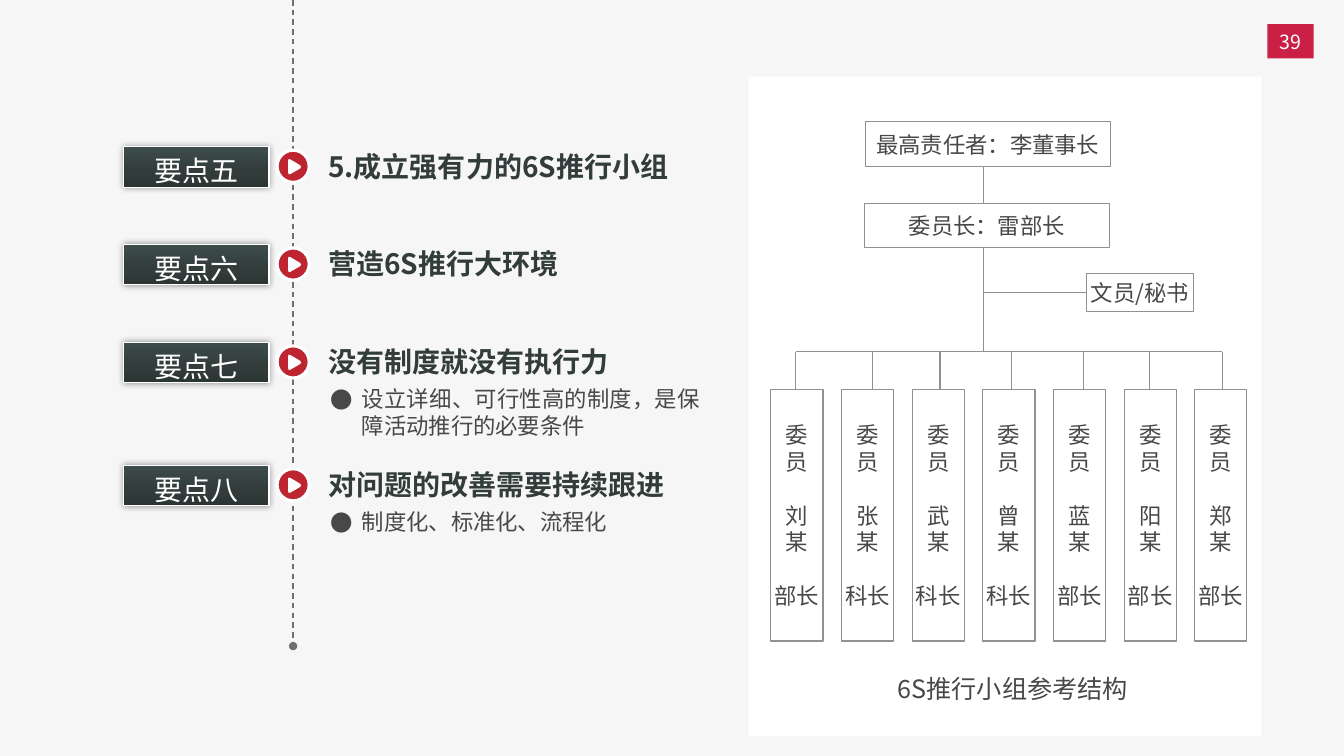
from copy import deepcopy
from lxml import etree
from pptx import Presentation
from pptx.dml.color import RGBColor
from pptx.enum.dml import MSO_LINE
from pptx.enum.shapes import MSO_CONNECTOR, MSO_SHAPE
from pptx.enum.text import MSO_ANCHOR, PP_ALIGN
from pptx.oxml.ns import qn
from pptx.util import Pt

# Content: label, heading, detail, detail width, top of the dot
POINTS = [
    ("要点五", "5.成立强有力的6S推行小组", None, 0, 107.3),
    ("要点六", "营造6S推行大环境", None, 0, 177.1),
    ("要点七", "没有制度就没有执行力", "设立详细、可行性高的制度，是保障活动推行的必要条件", 278.6, 247),
    ("要点八", "对问题的改善需要持续跟进", "制度化、标准化、流程化", 288.7, 334.8),
]
# Surname, rank, x of the line down to the box
MEMBERS = [("刘", "部长", 568.8), ("张", "科长", 623.5), ("武", "科长", 671.8),
           ("曾", "科长", 722.9), ("蓝", "部长", 774), ("阳", "部长", 821.5),
           ("郑", "部长", 873.4)]
HEAD = "最高责任者：李董事长"
CHAIR = "委员长：雷部长"
CLERK = "文员/秘书"
CAPTION = "6S推行小组参考结构"
PAGE = "39"

FONT = "Noto Sans CJK SC"
WHITE = RGBColor(0xFF, 0xFF, 0xFF)
BACK = RGBColor(0xF6, 0xF6, 0xF6)
PINK = RGBColor(0xCA, 0x20, 0x45)
RED = RGBColor(0xBD, 0x25, 0x31)
DARK = RGBColor(0x31, 0x3C, 0x3B)
TEXT = RGBColor(0x48, 0x48, 0x49)
EDGE = RGBColor(0x91, 0x91, 0x92)
DASH = RGBColor(0x71, 0x6F, 0x6E)
SHADES = [(0, RGBColor(0x3E, 0x4C, 0x4B)), (0.61, DARK),
          (1, RGBColor(0x2B, 0x35, 0x34))]

# Play mark, measured from the top left of its dot
PLAY = [(16.6, 10.8), (13, 8.6), (9.4, 6.5), (8.4, 6.3), (7.9, 7.2), (7.9, 15.8),
        (8.4, 17.2), (9.4, 17.1), (13, 15.1), (16.6, 13), (17.2, 11.9)]
AXIS = 209.5
TRUNK, BAR = 702.7, 251.3
BOX_TOP, BOX_STEP = 277.9, 50.5

prs = Presentation()
prs.slide_width, prs.slide_height = Pt(960.48), Pt(540)
slide = prs.slides.add_slide(prs.slide_layouts[6])
slide.background.fill.solid()
slide.background.fill.fore_color.rgb = BACK
shapes = slide.shapes


def write(shape, lines, size, color, align=PP_ALIGN.CENTER, bold=False,
          anchor=MSO_ANCHOR.TOP, wrap=True):
    frame = shape.text_frame
    frame.word_wrap = wrap
    frame.vertical_anchor = anchor
    frame.text = "\n".join(lines)
    for para in frame.paragraphs:
        para.alignment = align
        font = para.font
        font.name, font.size, font.bold = FONT, Pt(size), bold
        font.color.rgb = color
    return frame


def paint(shape, fill, line=None, width=0.75):
    shape.shadow.inherit = False
    shape.fill.solid()
    shape.fill.fore_color.rgb = fill
    if line is None:
        shape.line.fill.background()
    else:
        shape.line.color.rgb = line
        shape.line.width = Pt(width)


def block(x, y, w, h, fill, line=None, width=0.75, kind=MSO_SHAPE.RECTANGLE):
    shape = shapes.add_shape(kind, Pt(x), Pt(y), Pt(w), Pt(h))
    paint(shape, fill, line, width)
    return shape


def note(x, y, w, h, line, size, color, align, bold=False):
    box = shapes.add_textbox(Pt(x), Pt(y), Pt(w), Pt(h))
    return write(box, [line], size, color, align, bold)


def rule(x1, y1, x2, y2, color=EDGE, width=0.75):
    line = shapes.add_connector(MSO_CONNECTOR.STRAIGHT, Pt(x1), Pt(y1), Pt(x2), Pt(y2))
    line.line.color.rgb = color
    line.line.width = Pt(width)
    etree.SubElement(line._element.spPr, qn("a:effectLst"))
    return line


def node(x, y, w, h, lines):
    """Outlined box of the team chart."""
    box = block(x, y, w, h, WHITE, EDGE)
    write(box, lines, 16, TEXT, anchor=MSO_ANCHOR.MIDDLE, wrap=False)
    return box


def shade(shape):
    """Three-stop gradient and a soft dark glow."""
    shape.fill.gradient()
    shape.fill.gradient_angle = 270
    stops = shape._element.spPr.find(".//" + qn("a:gsLst"))
    stops.append(deepcopy(stops[-1]))
    for stop, (place, color) in zip(shape.fill.gradient_stops, SHADES):
        stop.position = place
        stop.color.rgb = color
    effect = shape._element.spPr.find(qn("a:effectLst"))
    glow = etree.SubElement(effect, qn("a:outerShdw"), blurRad=str(Pt(5)), dist="0",
                            dir="0", algn="ctr", rotWithShape="0")
    tint = etree.SubElement(glow, qn("a:srgbClr"), val="000000")
    etree.SubElement(tint, qn("a:alpha"), val="40000")


def bullet(para):
    props = para._p.get_or_add_pPr()
    props.set("marL", str(Pt(22.5)))
    props.set("indent", str(Pt(-22.5)))
    etree.SubElement(props, qn("a:buFont"), typeface=FONT)
    etree.SubElement(props, qn("a:buChar"), char="●")
    # The default run format must follow the bullet
    props.append(props.find(qn("a:defRPr")))


def point(label, title, detail, width, top):
    block(198, top, 23, 23, RED, WHITE, 2.25, MSO_SHAPE.OVAL)
    spots = [(Pt(198 + x), Pt(top + y)) for x, y in PLAY]
    path = shapes.build_freeform(*spots[0])
    path.add_line_segments(spots[1:])
    paint(path.convert_to_shape(), WHITE)
    note(227.5, top - 4.3, 331, 31.7, title, 20, DARK, PP_ALIGN.JUSTIFY, True)
    button = block(88.6, top - 2.6, 103.7, 29, DARK, WHITE)
    shade(button)
    frame = write(button, [label], 20, WHITE)
    frame.margin_left = frame.margin_right = Pt(9.4)
    frame.margin_top = frame.margin_bottom = Pt(5)
    if detail:
        frame = note(229, top + 24.8, width, 27, detail, 16, TEXT, PP_ALIGN.JUSTIFY)
        bullet(frame.paragraphs[0])


badge = block(905.8, 17.3, 33.1, 24.5, PINK)
write(badge, [PAGE], 14, WHITE, anchor=MSO_ANCHOR.MIDDLE, wrap=False)

axis = rule(AXIS, 0, AXIS, 461.5, DASH, 1)
axis.line.dash_style = MSO_LINE.DASH
etree.SubElement(axis.line._get_or_add_ln(), qn("a:tailEnd"), type="oval")
for item in POINTS:
    point(*item)

block(535, 54.7, 366.5, 470.9, WHITE)
node(618.5, 87.1, 175, 31.7, [HEAD])
node(617.8, 145.4, 175, 31.7, [CHAIR])
clerk = node(776.2, 195.1, 77, 27.4, [CLERK])
for i, (name, rank, drop) in enumerate(MEMBERS):
    box = node(550.8 + BOX_STEP * i, BOX_TOP, 37.4, 180, ["委", "员", name, "某", rank])
    for k in (2, 4):
        box.text_frame.paragraphs[k].space_before = Pt(19.2)
    rule(drop, BAR, drop, BOX_TOP)
rule(MEMBERS[0][2], BAR, MEMBERS[-1][2], BAR)
rule(TRUNK, 118.8, TRUNK, 145.4)
rule(TRUNK, 177.1, TRUNK, BAR)
rule(TRUNK, 208.8, 776.2, 208.8).end_connect(clerk, 1)
note(634.3, 477.4, 182.2, 28.8, CAPTION, 18, TEXT, PP_ALIGN.LEFT)

prs.save("out.pptx")
